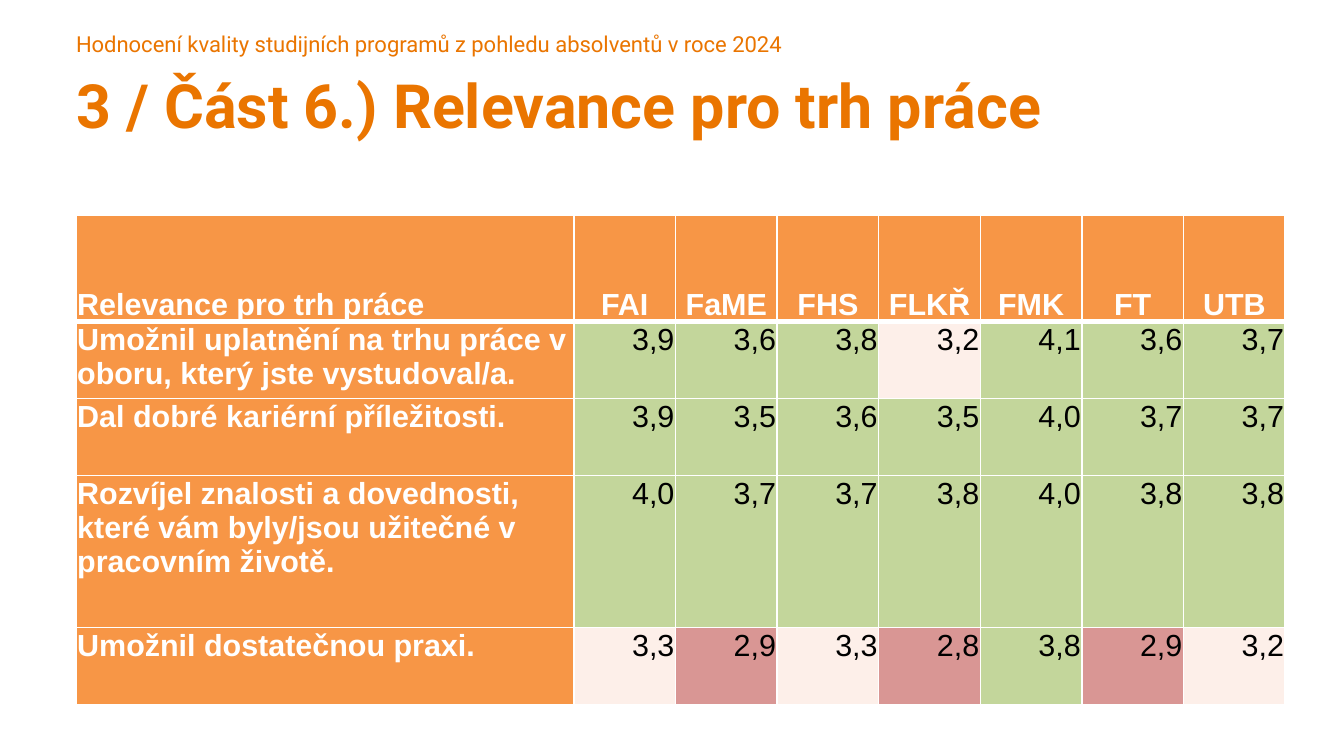
"""Build the slide on how graduates rate labour-market relevance."""
from dataclasses import dataclass

import lxml.etree
import pptx
import pptx.dml.color
import pptx.enum.text
import pptx.oxml.ns
import pptx.util

Pt = pptx.util.Pt
ALIGN = pptx.enum.text.PP_ALIGN
ANCHOR = pptx.enum.text.MSO_ANCHOR


@dataclass(frozen=True)
class Theme:
    accent: str = "EA7500"
    header: str = "F79646"
    good: str = "C3D69B"
    fair: str = "FDEFE9"
    poor: str = "D99694"
    light: str = "FFFFFF"
    dark: str = "000000"
    head_font: str = "Roboto"
    body_font: str = "Arial"
    kicker_size: int = 13
    title_size: int = 36
    table_size: int = 18


def rgb(color):
    return pptx.dml.color.RGBColor.from_string(color)


def write(tf, text, *, font, size, color, bold=False, align=ALIGN.LEFT, spacing=1.0):
    p = tf.paragraphs[0]
    p.alignment = align
    p.line_spacing = spacing
    r = p.add_run()
    r.text = text
    r.font.name = font
    r.font.size = Pt(size)
    r.font.bold = bold
    r.font.color.rgb = rgb(color)


class Deck:
    def __init__(self, theme, width, height):
        self.theme = theme
        self.prs = pptx.Presentation()
        self.prs.slide_width = Pt(width)
        self.prs.slide_height = Pt(height)
        self.s = self.prs.slides.add_slide(self.prs.slide_layouts[6])

    def text(self, text, left, top, width, height, **style):
        sp = self.s.shapes.add_textbox(Pt(left), Pt(top), Pt(width), Pt(height))
        tf = sp.text_frame
        tf.word_wrap = True
        tf.margin_left = tf.margin_right = tf.margin_top = tf.margin_bottom = 0
        write(tf, text, font=self.theme.head_font, color=self.theme.accent, **style)

    def border(self, cell, side, width):
        tc_pr = cell._tc.get_or_add_tcPr()
        qn = pptx.oxml.ns.qn
        ln = lxml.etree.SubElement(tc_pr, qn(f"a:ln{side}"), w=str(Pt(width)))
        fill = lxml.etree.SubElement(ln, qn("a:solidFill"))
        lxml.etree.SubElement(fill, qn("a:srgbClr"), val=self.theme.light)

    def cell(self, cell, text, fill, margins, rules, anchor=ANCHOR.TOP, **style):
        for side, width in zip("LRTB", rules):
            self.border(cell, side, width)
        cell.fill.solid()
        cell.fill.fore_color.rgb = rgb(fill)
        cell.vertical_anchor = anchor
        side, top = margins
        cell.margin_left = cell.margin_right = Pt(side)
        cell.margin_top, cell.margin_bottom = Pt(top), 0
        write(cell.text_frame, text, font=self.theme.body_font,
              size=self.theme.table_size, **style)

    def score_fill(self, score):
        value = float(score.replace(",", "."))
        if value >= 3.5:
            return self.theme.good
        return self.theme.fair if value >= 3 else self.theme.poor

    def table(self, rows, left, top, widths, heights):
        frame = self.s.shapes.add_table(len(rows), len(widths), Pt(left), Pt(top),
                                        Pt(sum(widths)), Pt(sum(heights)))
        table = frame.table
        table.horz_banding = False
        for column, width in zip(table.columns, widths):
            column.width = Pt(width)
        for row, height in zip(table.rows, heights):
            row.height = Pt(height)
        tight, roomy = (0.7, 0.7), (3.6, 0)
        label = dict(fill=self.theme.header, color=self.theme.light, bold=True)
        for i, row in enumerate(rows):
            rules = (1, 1, 3 if i == 1 else 1, 3 if i == 0 else 1)
            anchor = ANCHOR.BOTTOM if i == 0 else ANCHOR.TOP
            for j, text in enumerate(row):
                if j == 0:
                    style = dict(label, margins=tight)
                elif i == 0:
                    style = dict(label, margins=roomy, align=ALIGN.CENTER, spacing=1.5)
                else:
                    style = dict(fill=self.score_fill(text), color=self.theme.dark,
                                 margins=tight, align=ALIGN.RIGHT)
                self.cell(table.cell(i, j), text, rules=rules, anchor=anchor, **style)


RATINGS = [
    ("Relevance pro trh práce", "FAI", "FaME", "FHS", "FLKŘ", "FMK", "FT", "UTB"),
    ("Umožnil uplatnění na trhu práce v oboru, který jste vystudoval/a.",
     "3,9", "3,6", "3,8", "3,2", "4,1", "3,6", "3,7"),
    ("Dal dobré kariérní příležitosti.",
     "3,9", "3,5", "3,6", "3,5", "4,0", "3,7", "3,7"),
    ("Rozvíjel znalosti a dovednosti, které vám byly/jsou užitečné v pracovním životě.",
     "4,0", "3,7", "3,7", "3,8", "4,0", "3,8", "3,8"),
    ("Umožnil dostatečnou praxi.",
     "3,3", "2,9", "3,3", "2,8", "3,8", "2,9", "3,2"),
]


def main():
    theme = Theme()
    deck = Deck(theme, 793.5, 446.5)
    left = 44.9
    deck.text("Hodnocení kvality studijních programů z pohledu absolventů v roce 2024",
              left, 18, 714, 16, size=theme.kicker_size)
    deck.text("3 / Část 6.) Relevance pro trh práce",
              left, 39.6, 733, 87, size=theme.title_size, bold=True)
    deck.table(RATINGS, left, 127, [294] + [60] * 7, [63, 45.5, 45.5, 89.5, 45.5])
    deck.prs.save("out.pptx")


if __name__ == "__main__":
    main()
